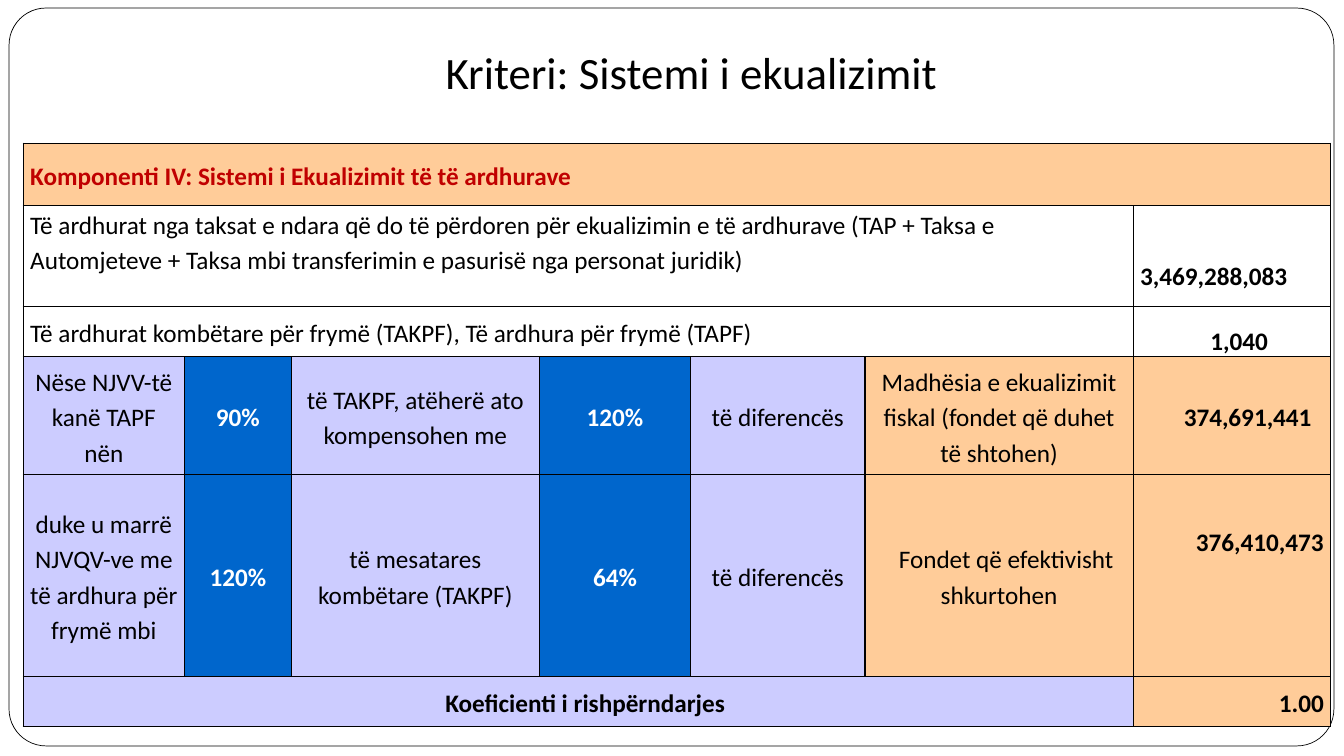
import lxml.etree
import pptx
import pptx.dml.color
import pptx.enum.shapes
import pptx.enum.text
import pptx.oxml.ns
import pptx.util

RGBColor = pptx.dml.color.RGBColor
BLACK = RGBColor(0x00, 0x00, 0x00)
WHITE = RGBColor(0xFF, 0xFF, 0xFF)
RED = RGBColor(0xC0, 0x00, 0x00)
PEACH = RGBColor(0xFF, 0xCC, 0x99)
LILAC = RGBColor(0xCC, 0xCC, 0xFF)
BLUE = RGBColor(0x00, 0x66, 0xCC)

FONT = "Calibri"
SCALE = 9144
ALIGN = pptx.enum.text.PP_ALIGN
ANCHOR = pptx.enum.text.MSO_ANCHOR
LEFT, MID, RIGHT = ALIGN.LEFT, ALIGN.CENTER, ALIGN.RIGHT

COLS = (160, 106, 246, 150, 173, 266, 196)
ROWS = (62, 100, 50, 117, 200, 50)


def px(n):
    """Turn px into EMU."""
    return pptx.util.Emu(n * SCALE)


def style(par, size, color, bold, align):
    """Format a paragraph and its runs."""
    par.alignment = align
    for run in par.runs:
        run.font.name = FONT
        run.font.size = pptx.util.Pt(size)
        run.font.bold = bold
        run.font.color.rgb = color


def inset(item, left, top, right, bottom):
    """Set the four margins of a cell or text frame."""
    item.margin_left, item.margin_top = px(left), px(top)
    item.margin_right, item.margin_bottom = px(right), px(bottom)


def frame(slide, x, y, w, h):
    """Draw the rounded frame behind the title."""
    kind = pptx.enum.shapes.MSO_SHAPE.ROUNDED_RECTANGLE
    box = slide.shapes.add_shape(kind, px(x), px(y), px(w), px(h))
    box.adjustments[0] = 0.05
    box.shadow.inherit = False
    box.fill.solid()
    box.fill.fore_color.rgb = WHITE
    box.line.color.rgb = BLACK
    box.line.width = pptx.util.Pt(0.5)
    slide.shapes.title.element.addprevious(box.element)


def head(slide, x, y, w, h):
    """Place and format the title."""
    title = slide.shapes.title
    title.left, title.top, title.width, title.height = map(px, (x, y, w, h))
    text = title.text_frame
    text.text = "Kriteri: Sistemi i ekualizimit"
    text.word_wrap = True
    text.vertical_anchor = ANCHOR.BOTTOM
    inset(text, 10, 5, 22, 10)
    style(text.paragraphs[0], 32, BLACK, False, MID)


def edge(cell):
    """Give a cell thin black borders."""
    props = cell._tc.get_or_add_tcPr()
    for side in ("a:lnL", "a:lnR", "a:lnT", "a:lnB"):
        line = lxml.etree.SubElement(props, pptx.oxml.ns.qn(side), w="12700")
        fill = lxml.etree.SubElement(line, pptx.oxml.ns.qn("a:solidFill"))
        lxml.etree.SubElement(fill, pptx.oxml.ns.qn("a:srgbClr"), val=str(BLACK))


def write(cell, text, fill=None, align=MID, bold=False, color=BLACK,
          anchor=ANCHOR.MIDDLE, pad=(7, 0, 7, 0), indent=0):
    """Fill and format one cell."""
    if fill is None:
        cell.fill.background()
    else:
        cell.fill.solid()
        cell.fill.fore_color.rgb = fill
    cell.text_frame.text = text
    cell.vertical_anchor = anchor
    inset(cell, *pad)
    par = cell.text_frame.paragraphs[0]
    par.line_spacing = 1.15
    style(par, 18, color, bold, align)
    if indent:
        props = par._p.get_or_add_pPr()
        props.set("marL", "0")
        props.set("indent", str(px(indent)))


def rule(grid, row, texts):
    """Write the five cells of an equalisation rule."""
    for col, text in enumerate(texts):
        share = col % 2 == 1
        write(grid.cell(row, col), text, BLUE if share else LILAC,
              bold=share, color=WHITE if share else BLACK)


def table(slide, x, y):
    """Build the table of the equalisation system."""
    shape = slide.shapes.add_table(len(ROWS), len(COLS), px(x), px(y),
                                   px(sum(COLS)), px(sum(ROWS)))
    grid = shape.table
    grid.first_row = grid.horz_banding = False
    for col, width in zip(grid.columns, COLS):
        col.width = px(width)
    for row, height in zip(grid.rows, ROWS):
        row.height = px(height)
    for cell in grid.iter_cells():
        edge(cell)
    for row, last in ((0, 6), (1, 5), (2, 5), (5, 5)):
        grid.cell(row, 0).merge(grid.cell(row, last))

    write(grid.cell(0, 0), "Komponenti IV: Sistemi i Ekualizimit të të ardhurave",
          PEACH, LEFT, True, RED)
    write(grid.cell(1, 0), "Të ardhurat nga taksat e ndara që do të përdoren për "
          "ekualizimin e të ardhurave (TAP + Taksa e Automjeteve + Taksa mbi "
          "transferimin e pasurisë nga personat juridik)",
          align=LEFT, anchor=ANCHOR.TOP)
    write(grid.cell(1, 6), "3,469,288,083", align=LEFT, bold=True,
          anchor=ANCHOR.BOTTOM, pad=(7, 0, 7, 14))
    write(grid.cell(2, 0), "Të ardhurat kombëtare për frymë (TAKPF), "
          "Të ardhura për frymë (TAPF)", align=LEFT)
    write(grid.cell(2, 6), "1,040", bold=True, anchor=ANCHOR.BOTTOM, indent=14)
    rule(grid, 3, ("Nëse NJVV-të kanë TAPF nën", "90%",
                   "të TAKPF, atëherë ato kompensohen me", "120%", "të diferencës"))
    write(grid.cell(3, 5), "Madhësia e ekualizimit fiskal (fondet që duhet të shtohen)",
          PEACH)
    write(grid.cell(3, 6), "374,691,441", PEACH, RIGHT, True, pad=(7, 0, 19, 0))
    rule(grid, 4, ("duke u marrë NJVQV-ve me të ardhura për frymë mbi", "120%",
                   "të mesatares kombëtare (TAKPF)", "64%", "të diferencës"))
    write(grid.cell(4, 5), "Fondet që efektivisht shkurtohen", PEACH, indent=14)
    write(grid.cell(4, 6), "376,410,473", PEACH, RIGHT, True,
          anchor=ANCHOR.TOP, pad=(7, 48, 7, 0))
    write(grid.cell(5, 0), "Koeficienti i rishpërndarjes", LILAC, bold=True, indent=14)
    write(grid.cell(5, 6), "1.00", PEACH, RIGHT, True, indent=14)


def main():
    """Build and save the slide."""
    deck = pptx.Presentation()
    deck.slide_width, deck.slide_height = px(1333), px(750)
    slide = deck.slides.add_slide(deck.slide_layouts[5])
    frame(slide, 9, 8, 1314, 732)
    head(slide, 267, 30, 850, 78)
    table(slide, 23, 142)
    deck.save("out.pptx")


if __name__ == "__main__":
    main()
